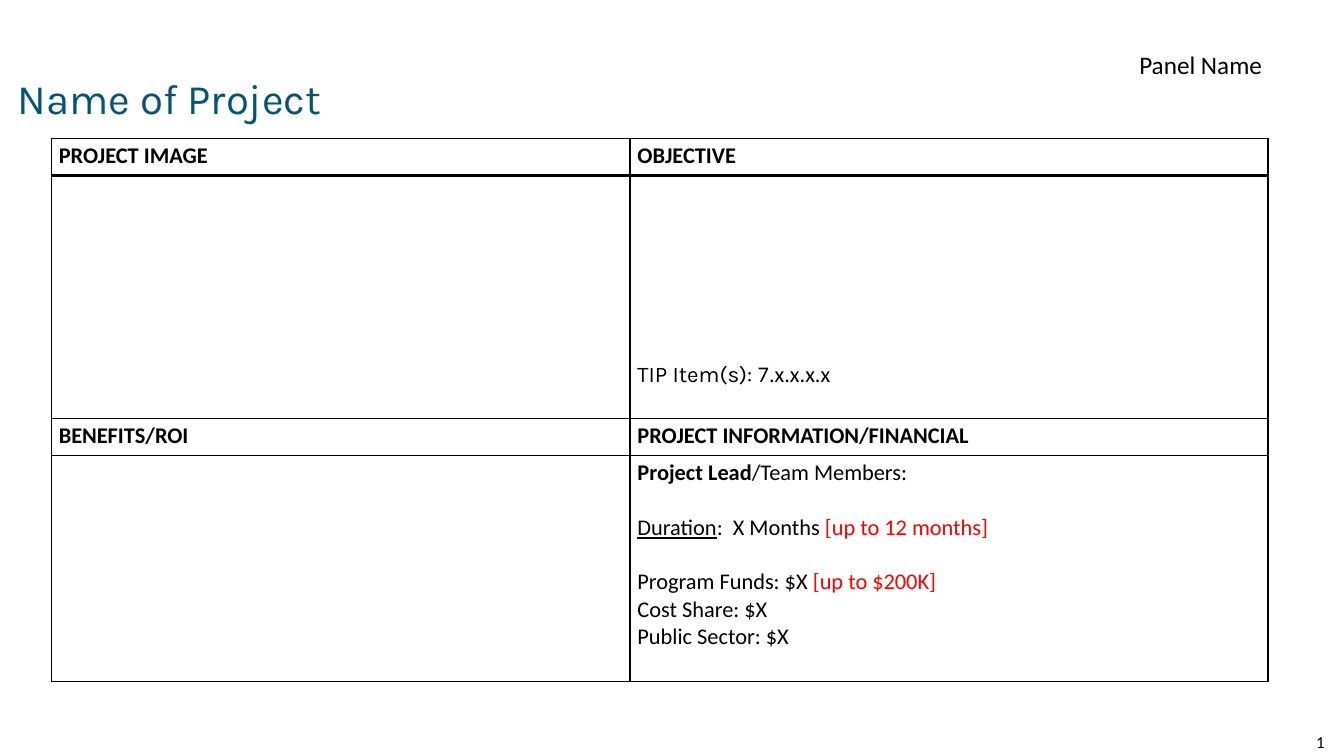
"""Build a project overview slide with a four-part table."""
from lxml import etree
from pptx import Presentation
from pptx.dml.color import RGBColor
from pptx.enum.text import MSO_ANCHOR, PP_ALIGN
from pptx.oxml.ns import qn
from pptx.util import Pt

LEFT, RIGHT = PP_ALIGN.LEFT, PP_ALIGN.RIGHT
TOP, MIDDLE, BOTTOM = MSO_ANCHOR.TOP, MSO_ANCHOR.MIDDLE, MSO_ANCHOR.BOTTOM
COLORS = {"title": "045571", "text": "000000", "limit": "FF0000"}
BODY_FONT, TITLE_FONT = "Calibri", "Karla"
LINE_HEIGHT = 19.5


def add_text(paragraph, text, size=16, font=BODY_FONT, color="text", bold=False, underline=False):
    """Append a formatted run to a paragraph."""
    run = paragraph.add_run()
    run.text = text
    run.font.size = Pt(size)
    run.font.name = font
    run.font.bold = bold
    run.font.underline = underline
    run.font.color.rgb = RGBColor.from_string(COLORS[color])


class SlideBuilder:
    """Hold the style and the current slide."""

    def __init__(self, slide):
        """Keep the slide that receives the elements."""
        self.slide = slide

    def text_box(self, text, left, top, width, height, align=LEFT, anchor=TOP, **style):
        """Add a one-line text box."""
        shape = self.slide.shapes.add_textbox(Pt(left), Pt(top), Pt(width), Pt(height))
        frame = shape.text_frame
        frame.word_wrap = True
        frame.vertical_anchor = anchor
        paragraph = frame.paragraphs[0]
        paragraph.alignment = align
        add_text(paragraph, text, **style)

    def table(self, left, top, columns, rows):
        """Add a plain bordered table with a heavier rule under its first row."""
        frame = self.slide.shapes.add_table(
            len(rows), len(columns), Pt(left), Pt(top), Pt(sum(columns)), Pt(sum(rows)))
        table = frame.table
        table.first_row = table.horz_banding = False
        for column, width in zip(table.columns, columns):
            column.width = Pt(width)
        for index, (row, height) in enumerate(zip(table.rows, rows)):
            row.height = Pt(height)
            for cell in row.cells:
                cell.margin_left = cell.margin_right = Pt(5.4)
                cell.margin_top = cell.margin_bottom = Pt(2.7)
                self.borders(cell, top=2 if index == 1 else 1, bottom=2 if index == 0 else 1)
                cell.fill.background()
        return table

    def borders(self, cell, top, bottom):
        """Draw the four borders of a cell."""
        properties = cell._tc.get_or_add_tcPr()
        for side, width in (("L", 1), ("R", 1), ("T", top), ("B", bottom)):
            line = etree.SubElement(properties, qn(f"a:ln{side}"), w=str(Pt(width)))
            fill = etree.SubElement(line, qn("a:solidFill"))
            etree.SubElement(fill, qn("a:srgbClr"), val=COLORS["text"])

    def cell_text(self, cell, lines):
        """Fill a cell with lines, each a space before and a list of runs."""
        frame = cell.text_frame
        for index, (space, runs) in enumerate(lines):
            paragraph = frame.add_paragraph() if index else frame.paragraphs[0]
            if space:
                paragraph.space_before = Pt(space)
            for text, style in runs:
                add_text(paragraph, text, **style)


def main():
    """Compose and save the slide."""
    presentation = Presentation()
    presentation.slide_width, presentation.slide_height = Pt(960), Pt(540)
    builder = SlideBuilder(presentation.slides.add_slide(presentation.slide_layouts[6]))

    builder.text_box("Name of Project", 5.76, 46.8, 947.5, 44.8, anchor=BOTTOM,
                     size=30, font=TITLE_FONT, color="title")
    builder.text_box("1", 737.3, 515.5, 216, 28.8, align=RIGHT, anchor=MIDDLE, size=12)

    table = builder.table(36.6, 98.7, [413.4, 455.8], [26.6, 173.5, 26.6, 161.3])
    headings = {(0, 0): "PROJECT IMAGE", (0, 1): "OBJECTIVE",
                (2, 0): "BENEFITS/ROI", (2, 1): "PROJECT INFORMATION/FINANCIAL"}
    for position, heading in headings.items():
        builder.cell_text(table.cell(*position), [(0, [(heading, {"bold": True})])])

    objective = table.cell(1, 1)
    objective.margin_top = Pt(133)
    builder.cell_text(objective, [
        (0, [("TIP Item(s): ", {"font": TITLE_FONT}), ("7.x.x.x.x", {})])])

    limit = {"color": "limit"}
    builder.cell_text(table.cell(3, 1), [
        (0, [("Project Lead", {"bold": True}), ("/Team Members:", {})]),
        (LINE_HEIGHT, [("Duration", {"underline": True}), (":  X Months ", {}),
                       ("[up to 12 months]", limit)]),
        (LINE_HEIGHT, [("Program Funds: $X ", {}), ("[up to $200K]", limit)]),
        (0, [("Cost Share: $X", {})]),
        (0, [("Public Sector: $X", {})]),
    ])

    builder.text_box("Panel Name", 224.6, 31.7, 684, 28.8, align=RIGHT, size=18)
    presentation.save("out.pptx")


if __name__ == "__main__":
    main()
